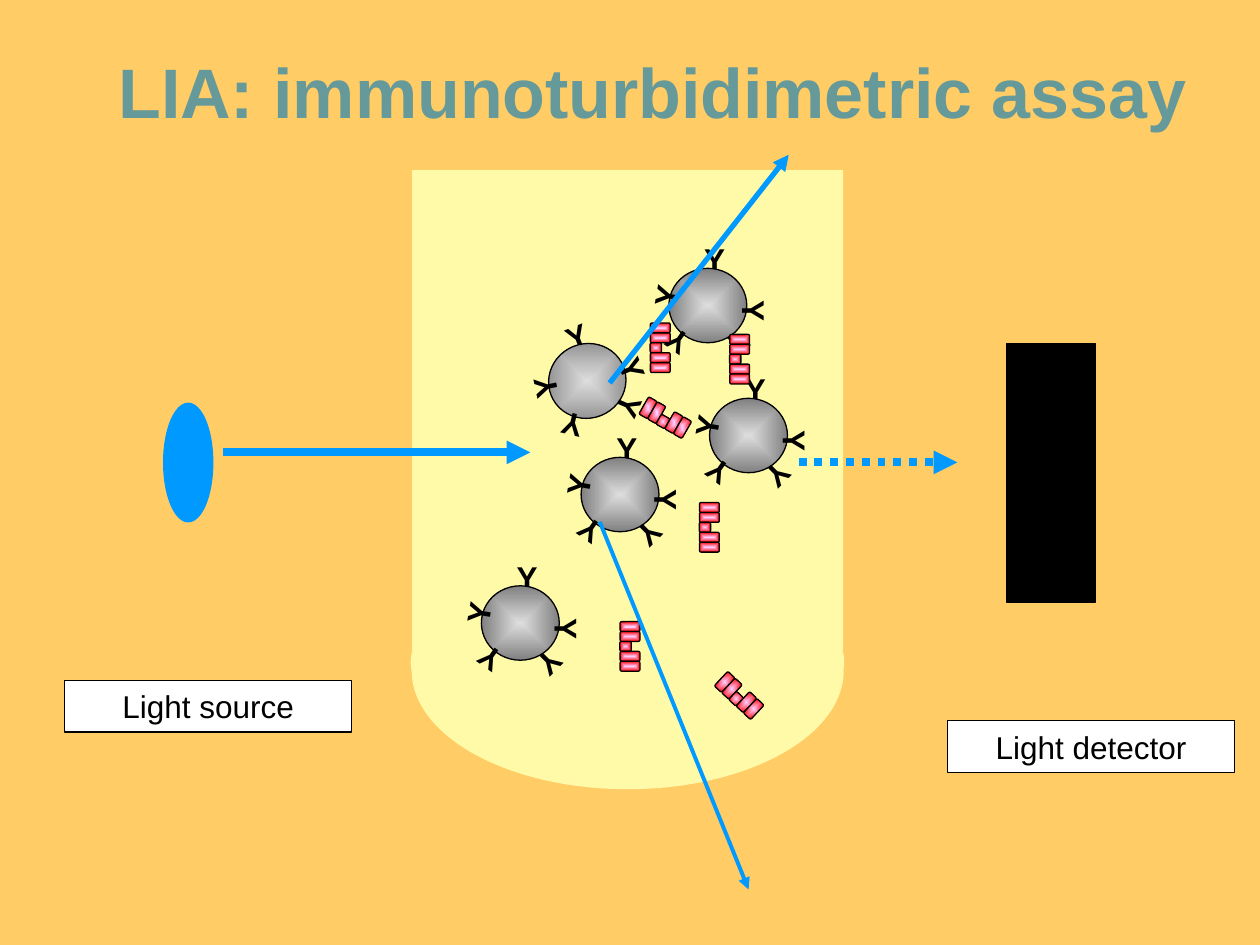
import math

import pptx
import pptx.util
from pptx.dml.color import RGBColor
from pptx.enum.dml import MSO_LINE
from pptx.enum.shapes import MSO_CONNECTOR, MSO_SHAPE
from pptx.enum.text import MSO_ANCHOR, MSO_AUTO_SIZE, PP_ALIGN
from pptx.oxml.ns import qn
from lxml import etree

Cm, Pt = pptx.util.Cm, pptx.util.Pt

# Antibodies round a bead: offset from its centre and angle
ARMS = [(0.08, -0.93, 0), (0.94, 0.06, 90), (0.64, 0.77, 135),
        (-0.86, -0.14, 279.9), (-0.58, 0.77, 215.2)]
BEADS = [(11.84, 7.68, -21.7), (14.27, 6.16, 0), (15.09, 8.78, 0),
         (10.49, 12.56, 0), (12.5, 9.97, 0)]
# Bars of an antigen: offset along x and width
BARS = [(0, 0.4), (0, 0.4), (0.09, 0.23), (0, 0.4), (0, 0.4)]
PITCH = 0.2
ANTIGENS = [(13.31, 7.01, 180), (13.41, 8.42, 120), (12.7, 13.03, 180),
            (14.91, 7.24, 180), (14.9, 14.02, 133), (14.3, 10.63, 180)]


def rgb(code):
    return RGBColor.from_string(code)


def turn(x, y, angle):
    a = math.radians(angle)
    return (x * math.cos(a) - y * math.sin(a),
            x * math.sin(a) + y * math.cos(a))


class Board:
    font = "Arial"
    ink = "000000"
    beam = "0099FF"
    fluid = "FFFAA7"

    def __init__(self, slide):
        self.slide = slide
        self.shapes = slide.shapes
        slide.background.fill.solid()
        slide.background.fill.fore_color.rgb = rgb("FFCC66")

    def words(self, frame, text, size, color, bold, align):
        para = frame.paragraphs[0]
        para.alignment = align
        run = para.add_run()
        run.text = text
        run.font.name = self.font
        run.font.size = Pt(size)
        run.font.bold = bold
        run.font.color.rgb = rgb(color)

    def title(self, text, x, y, w, h):
        box = self.shapes.title
        box.left, box.top, box.width, box.height = Cm(x), Cm(y), Cm(w), Cm(h)
        frame = box.text_frame
        frame.auto_size = MSO_AUTO_SIZE.NONE
        frame.vertical_anchor = MSO_ANCHOR.BOTTOM
        frame.margin_bottom = Cm(0.05)
        self.words(frame, text, 40, "669999", True, PP_ALIGN.RIGHT)

    def shape(self, kind, x, y, w, h, fill, line=None, angle=0, home=None):
        item = (home or self.shapes).add_shape(kind, Cm(x), Cm(y), Cm(w), Cm(h))
        item.shadow.inherit = False
        item.rotation = angle
        if isinstance(fill, tuple):
            self.glow(item, *fill)
        else:
            item.fill.solid()
            item.fill.fore_color.rgb = rgb(fill)
        if line:
            item.line.color.rgb = rgb(line)
            item.line.width = Pt(0.75)
        else:
            item.line.fill.background()
        return item

    def glow(self, item, inner, outer):
        item.fill.gradient()
        for stop, color, place in zip(item.fill.gradient_stops, (inner, outer), (0, 1)):
            stop.color.rgb = rgb(color)
            stop.position = place
        grad = item._element.spPr.find(qn("a:gradFill"))
        grad.remove(grad.find(qn("a:lin")))
        core = etree.SubElement(grad, qn("a:path"))
        core.set("path", "shape")
        etree.SubElement(core, qn("a:fillToRect"), l="50000", t="50000",
                         r="50000", b="50000")

    def label(self, text, x, y):
        item = self.shape(MSO_SHAPE.RECTANGLE, x, y, 5.79, 1.04, "FFFFFF", self.ink)
        item.text_frame.word_wrap = True
        self.words(item.text_frame, text, 18, self.ink, False, PP_ALIGN.CENTER)

    def arm(self, home, x, y, angle):
        w, h = 0.81, 1.02
        box = home.add_textbox(Cm(x - w / 2), Cm(y - h / 2), Cm(w), Cm(h))
        box.rotation = angle % 360
        frame = box.text_frame
        frame.word_wrap = True
        frame.margin_right = 0
        self.words(frame, "Y", 18, self.ink, True, PP_ALIGN.LEFT)

    def bead(self, x, y, angle):
        home = self.shapes.add_group_shape().shapes
        for n, (dx, dy, tilt) in enumerate(ARMS):
            dx, dy = turn(dx, dy, angle)
            self.arm(home, x + dx, y + dy, tilt + angle)
            if n == 0:  # the ball covers the foot of the first arm only
                self.shape(MSO_SHAPE.OVAL, x - 0.785, y - 0.75, 1.57, 1.5,
                           ("DDDDDD", "808080"), self.ink, angle % 360, home)

    def antigen(self, x, y, angle):
        home = self.shapes.add_group_shape().shapes
        for n, (shift, w) in enumerate(BARS):
            dx, dy = turn(shift, (2 - n) * PITCH, angle)
            self.shape(MSO_SHAPE.ROUNDED_RECTANGLE, x + dx - w / 2,
                       y + dy - PITCH / 2, w, PITCH, ("FFCCFF", "FF0000"),
                       self.ink, angle, home)

    def ray(self, x1, y1, x2, y2, width, dash=None):
        line = self.shapes.add_connector(MSO_CONNECTOR.STRAIGHT,
                                         Cm(x1), Cm(y1), Cm(x2), Cm(y2))
        line.line.color.rgb = rgb(self.beam)
        line.line.width = Pt(width)
        if dash:
            line.line.dash_style = dash
        props = line._element.spPr
        etree.SubElement(props.find(qn("a:ln")), qn("a:tailEnd"), type="triangle")
        etree.SubElement(props, qn("a:effectLst"))


def main():
    deck = pptx.Presentation()
    deck.slide_width, deck.slide_height = Cm(25.4), Cm(19.05)
    board = Board(deck.slides.add_slide(deck.slide_layouts[5]))
    board.title("LIA: immunoturbidimetric assay", -0.71, 0.13, 24.89, 2.59)

    # Cuvette
    moon = board.shape(MSO_SHAPE.MOON, 11.46, 10.36, 2.39, 8.71, board.fluid, angle=270)
    moon.adjustments[0] = 0.5
    board.shape(MSO_SHAPE.OVAL, 8.28, 11.46, 8.74, 3.78, board.fluid)
    board.shape(MSO_SHAPE.RECTANGLE, 8.31, 3.43, 8.69, 9.68, board.fluid)

    # Coated beads and antigens
    for spot in BEADS[:3]:
        board.bead(*spot)
    for spot in ANTIGENS:
        board.antigen(*spot)
    for spot in BEADS[3:]:
        board.bead(*spot)

    # Detector and light source
    board.shape(MSO_SHAPE.RECTANGLE, 20.29, 6.93, 1.8, 5.21, board.ink, board.ink)
    board.shape(MSO_SHAPE.OVAL, 3.3, 8.13, 0.99, 2.39, board.beam, board.beam)
    board.label("Light detector", 19.1, 14.53)
    board.label("Light source", 1.3, 13.72)

    # Light rays: incoming, scattered twice, transmitted
    board.ray(4.5, 9.12, 10.69, 9.12, 4.5)
    board.ray(12.29, 7.72, 15.9, 3.12, 3)
    board.ray(12.09, 10.52, 15.09, 17.93, 2.25)
    board.ray(16.1, 9.32, 19.3, 9.32, 4.5, MSO_LINE.ROUND_DOT)

    deck.save("out.pptx")


if __name__ == "__main__":
    main()
